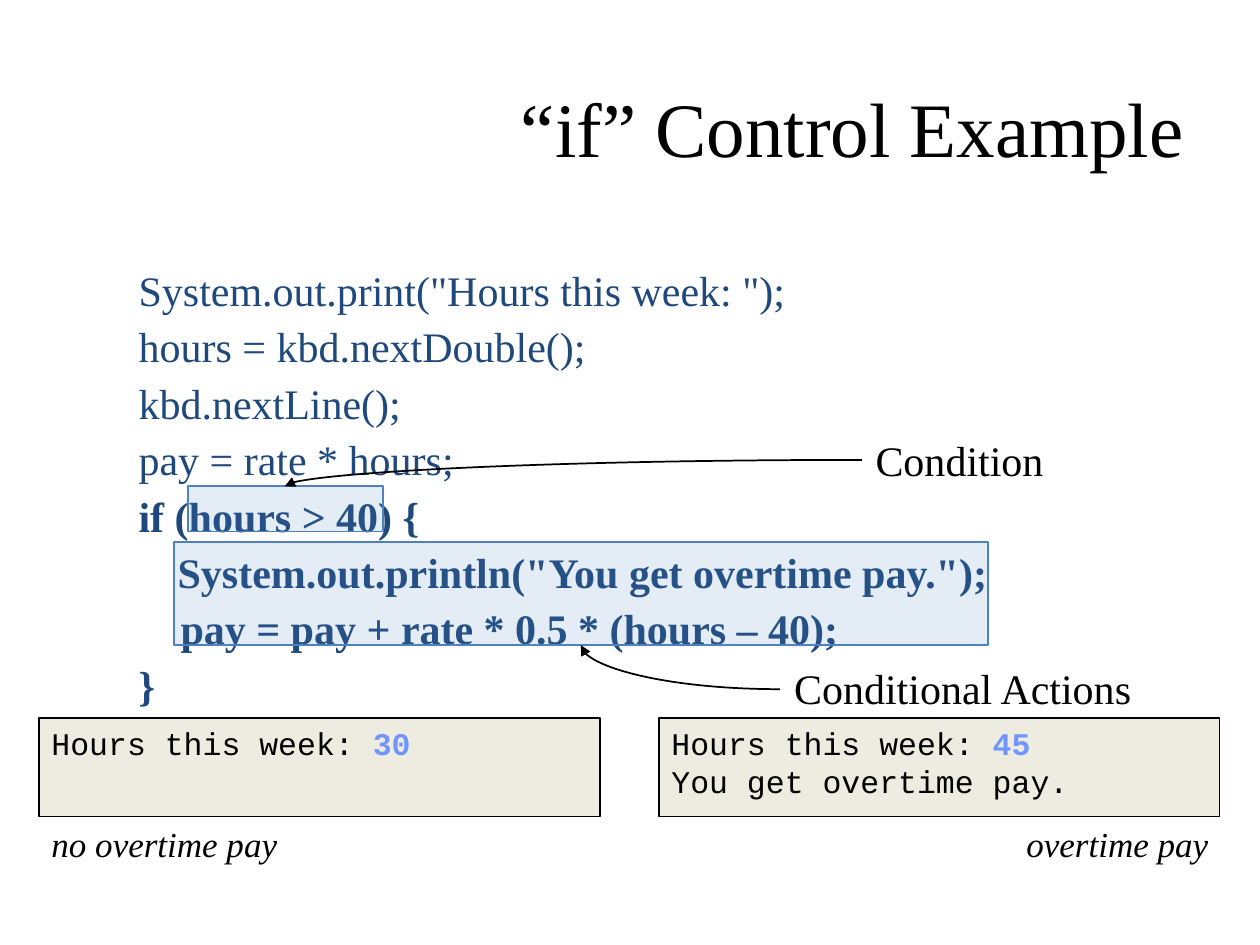
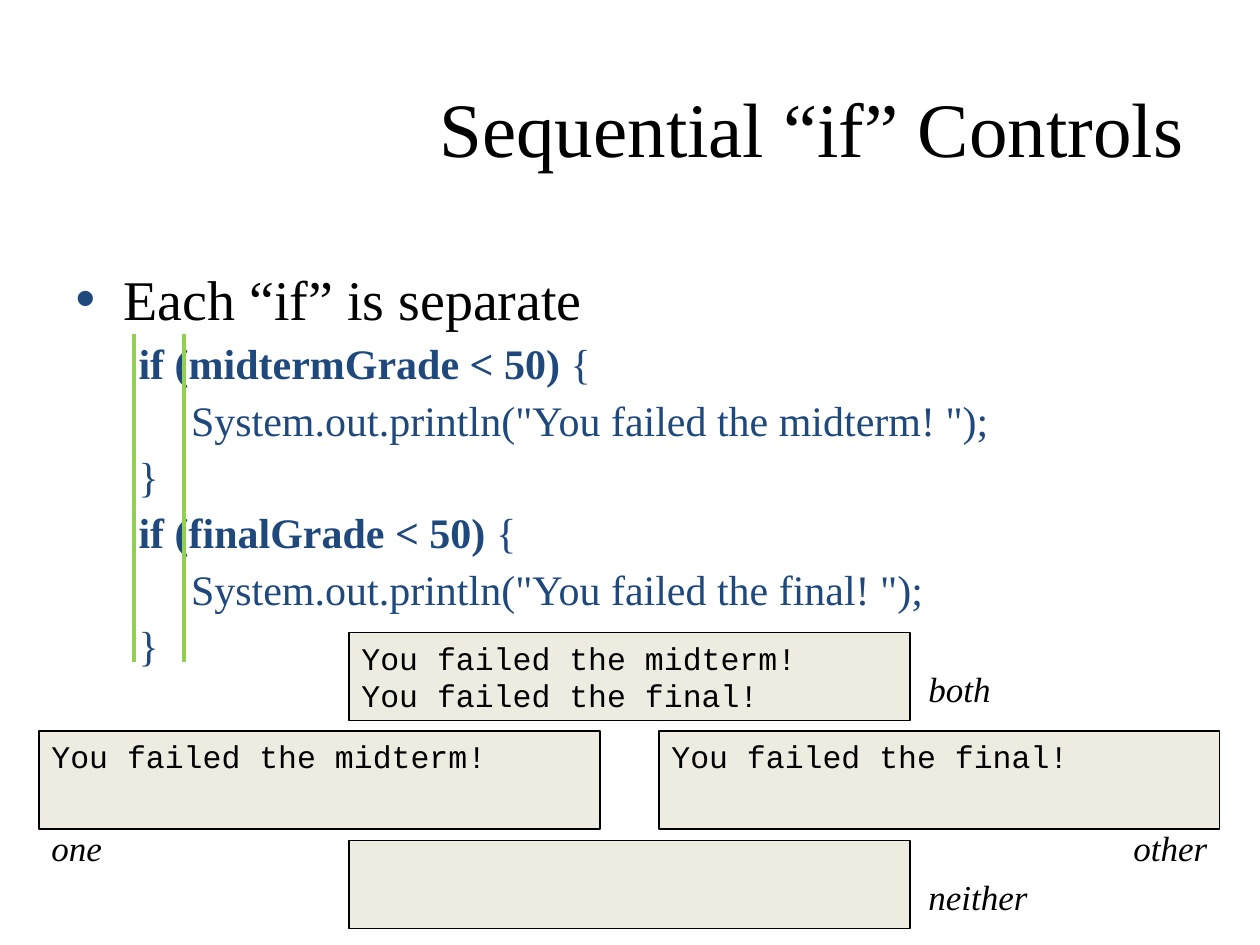
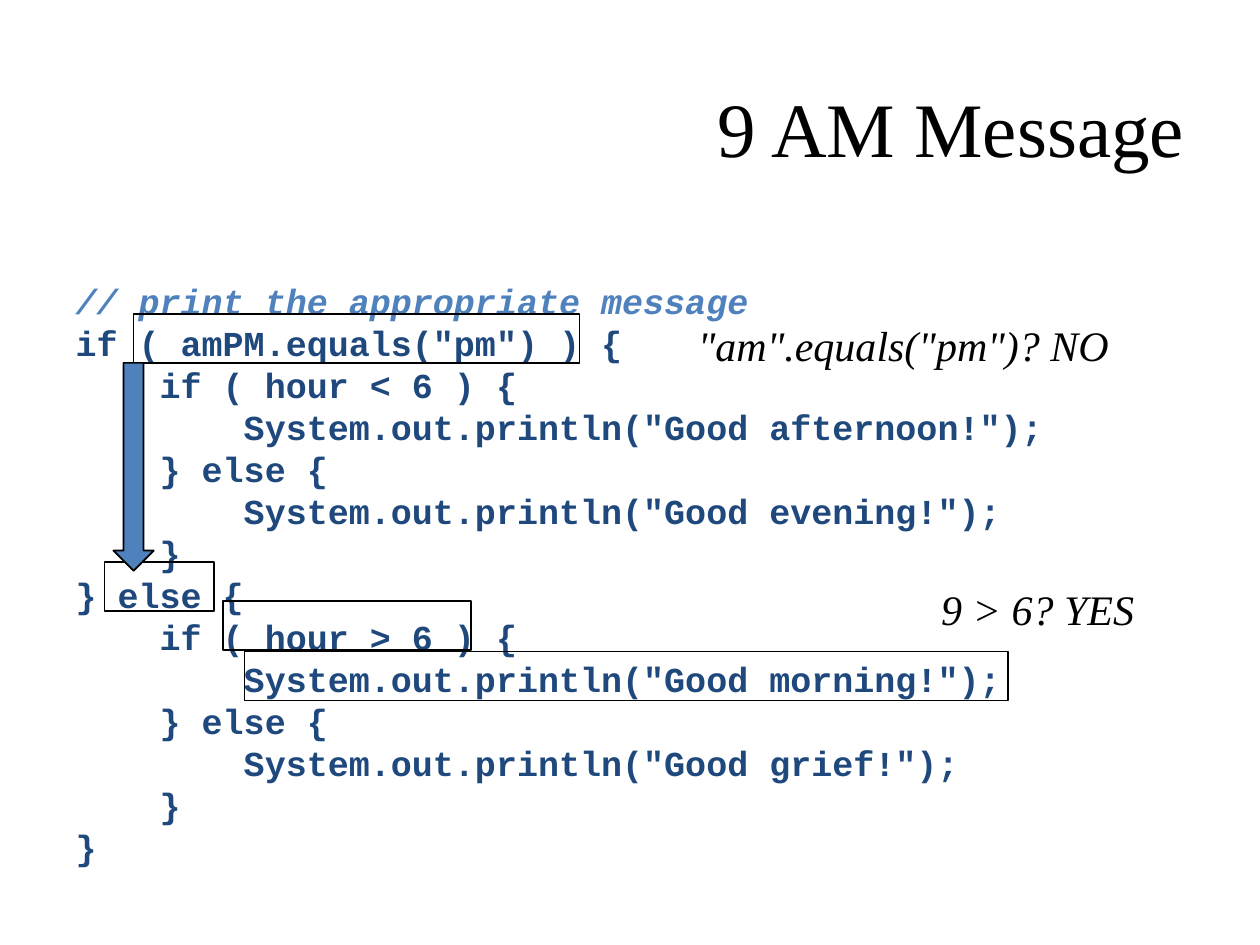
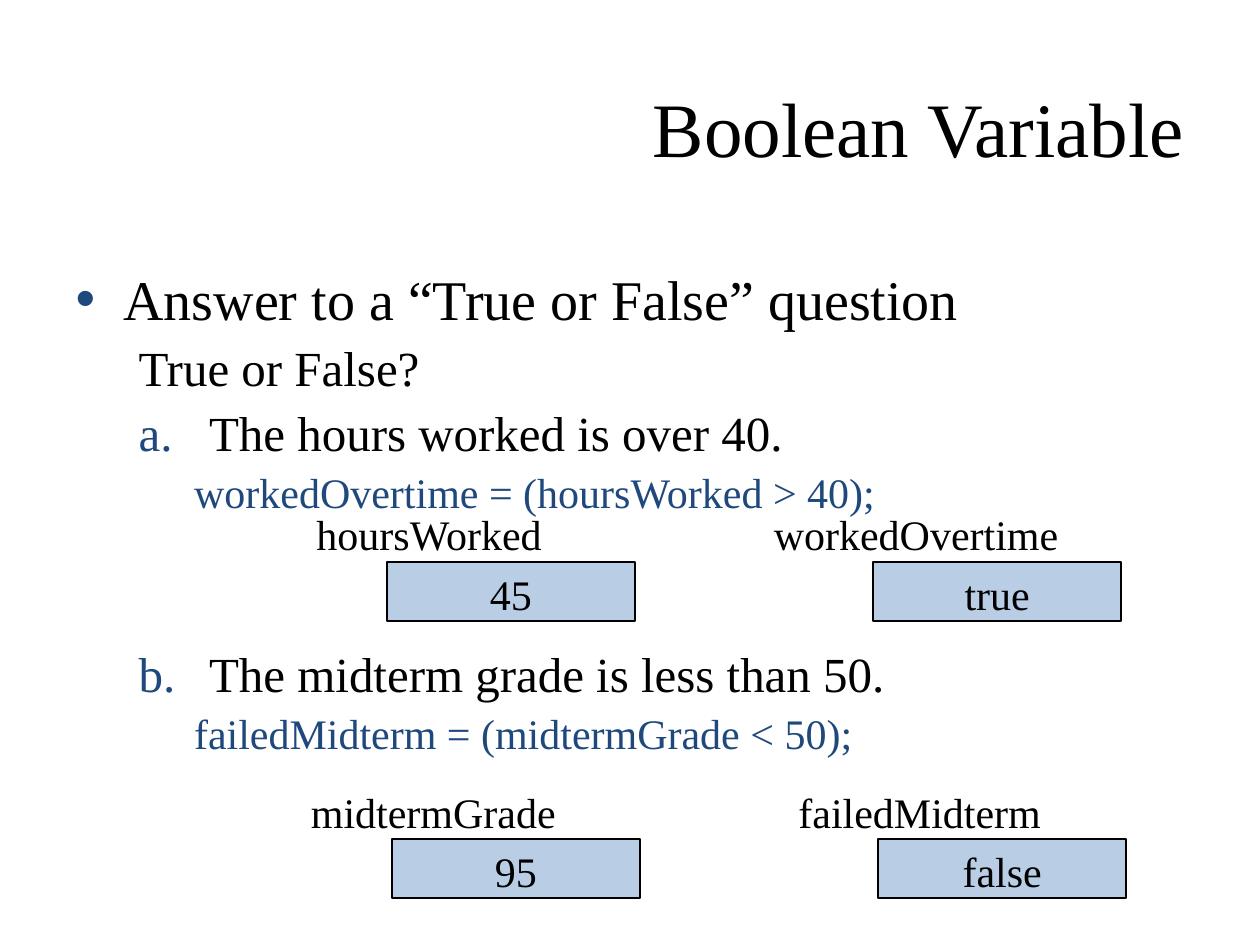
"""Build four slides on Java if controls and boolean variables."""
from lxml.etree import SubElement
from pptx import Presentation
from pptx.dml.color import RGBColor
from pptx.enum.shapes import MSO_CONNECTOR, MSO_SHAPE
from pptx.enum.text import MSO_ANCHOR, MSO_AUTO_SIZE, PP_ALIGN
from pptx.oxml.ns import qn
from pptx.util import Inches, Pt

BLACK = RGBColor(0x00, 0x00, 0x00)
NAVY = RGBColor(0x1F, 0x49, 0x7D)
BLUE = RGBColor(0x4F, 0x81, 0xBD)
PALE = RGBColor(0xB9, 0xCD, 0xE5)
SAND = RGBColor(0xEE, 0xEC, 0xE1)
INPUT = RGBColor(0x70, 0x95, 0xFD)
GREEN = RGBColor(0x92, 0xD0, 0x50)
SERIF, MONO = "Times New Roman", "Courier New"
LEFT, MID, RIGHT = PP_ALIGN.LEFT, PP_ALIGN.CENTER, PP_ALIGN.RIGHT

deck = Presentation()
deck.slide_width, deck.slide_height = Inches(10), Inches(7.5)
COL, ROW = deck.slide_width / 100, deck.slide_height / 75


def style(para, size, color=BLACK, face=SERIF, align=LEFT, bold=False, slant=False):
    """Format every run of a paragraph."""
    para.alignment = align
    for run in para.runs:
        font = run.font
        font.size, font.name, font.bold, font.italic = Pt(size), face, bold, slant
        font.color.rgb = color


def box(host, at, text="", fill=None, edge=BLACK, kind=MSO_SHAPE.RECTANGLE, **look):
    """Add a shape, or a text box if kind is None, placed in columns and rows."""
    x, y, w, h = at
    spot = [int(x * COL), int(y * ROW), int(w * COL), int(h * ROW)]
    if kind is None:
        shape = host.shapes.add_textbox(*spot)
        shape.text_frame.auto_size = MSO_AUTO_SIZE.SHAPE_TO_FIT_TEXT
    else:
        shape = host.shapes.add_shape(kind, *spot)
        shape.shadow.inherit = False
        shape.line.color.rgb, shape.line.width = edge, Pt(1)
        if fill is None:
            shape.fill.background()
        else:
            shape.fill.solid()
            shape.fill.fore_color.rgb = fill
    frame = shape.text_frame
    frame.word_wrap = kind is not None
    frame.vertical_anchor = MSO_ANCHOR.TOP
    if text:
        frame.text = text
        for para in frame.paragraphs:
            style(para, **look)
    return shape


# level, left, indent, space before, bullet, run format
LOOKS = {
    "point": (0, 0.38, -0.38, 0, "dot", dict(size=32)),
    "plain": (1, 0.81, -0.31, 3.4, None, dict(size=24, color=NAVY)),
    "bold": (1, 0.81, -0.31, 3.4, None, dict(size=24, color=NAVY, bold=True)),
    "ask": (1, 0.81, -0.31, 3.4, None, dict(size=28)),
    "first": (1, 1.06, -0.56, 3.4, 1, dict(size=28)),
    "second": (1, 1.06, -0.56, 72.5, 2, dict(size=28)),
    "answer": (2, 1.5, -0.56, 2.9, None, dict(size=24, color=NAVY)),
    "note": (0, 0.38, -0.38, 0, None, dict(size=20, color=BLUE, face=MONO, bold=True, slant=True)),
    "code": (0, 0.38, -0.38, 0, None, dict(size=20, color=NAVY, face=MONO, bold=True)),
}

PAGES = [
    ("“if” Control Example", [
        ("plain", 'System.out.print("Hours this week: ");'),
        ("plain", "hours = kbd.nextDouble();"),
        ("plain", "kbd.nextLine();"),
        ("plain", "pay = rate * hours;"),
        ("bold", "if (hours > 40) {"),
        ("bold", '\tSystem.out.println("You get overtime pay.");'),
        ("bold", "    pay = pay + rate * 0.5 * (hours – 40);"),
        ("bold", "}")]),
    ("Sequential “if” Controls", [
        ("point", "Each “if” is separate"),
        ("bold", "if (midtermGrade < 50) ", "{"),
        ("plain", '     System.out.println("You failed the midterm! ");'),
        ("plain", "}"),
        ("bold", "if (finalGrade < 50) ", "{"),
        ("plain", '     System.out.println("You failed the final! ");'),
        ("plain", "}")]),
    ("9 AM Message", [
        ("note", "// print the appropriate message"),
        ("code", 'if ( amPM.equals("pm") ) {'),
        ("code", "    if ( hour < 6 ) {"),
        ("code", '        System.out.println("Good afternoon!");'),
        ("code", "    } else {"),
        ("code", '        System.out.println("Good evening!");'),
        ("code", "    }"),
        ("code", "} else {"),
        ("code", "    if ( hour > 6 ) {"),
        ("code", '        System.out.println("Good morning!");'),
        ("code", "    } else {"),
        ("code", '        System.out.println("Good grief!");'),
        ("code", "    }"),
        ("code", "}")]),
    ("Boolean Variable", [
        ("point", "Answer to a “True or False” question"),
        ("ask", "True or False?"),
        ("first", "The hours worked is over 40."),
        ("answer", "workedOvertime = (hoursWorked > 40);"),
        ("second", "The midterm grade is less than 50."),
        ("answer", "failedMidterm = (midtermGrade < 50);")]),
]

slides = []
for name, rows in PAGES:
    slide = deck.slides.add_slide(deck.slide_layouts[1])
    slides.append(slide)
    title, body = slide.placeholders
    for holder, y, h in ((title, 3, 11.2), (body, 20, 50.8)):
        holder.left, holder.top = int(5 * COL), int(y * ROW)
        holder.width, holder.height = int(90 * COL), int(h * ROW)
        holder.text_frame.auto_size = MSO_AUTO_SIZE.NONE
    title.text_frame.text = name
    title.text_frame.vertical_anchor = MSO_ANCHOR.BOTTOM
    style(title.text_frame.paragraphs[0], 44, align=RIGHT)

    frame = body.text_frame
    frame.text = "\n".join(row[1] for row in rows)
    frame.margin_top = Inches(0.05 if rows[0][0] == "note" else 0.1)
    for para, (kind, _, *tail) in zip(frame.paragraphs, rows):
        level, left, indent, before, mark, look = LOOKS[kind]
        para.level = level
        prop = para._p.get_or_add_pPr()
        prop.set("marL", str(Inches(left)))
        prop.set("indent", str(Inches(indent)))
        if mark is None:
            SubElement(prop, qn("a:buNone"))
        else:
            tint = SubElement(prop, qn("a:buClr"))
            SubElement(tint, qn("a:srgbClr"), val=str(NAVY))
            if mark == "dot":
                SubElement(prop, qn("a:buChar"), char="•")
            else:
                SubElement(prop, qn("a:buAutoNum"), type="alphaLcPeriod", startAt=str(mark))
        para.space_before = Pt(before)
        if kind == "note":
            para.line_spacing = 1.5
        for end in tail:
            para.add_run().text = end
        style(para, **look)
        if tail:
            para.runs[-1].font.bold = False

pay, exam, morning, truth = slides
WIDE, NEAR, FAR, CORE = 44.5, 3.1, 52.3, 27.7

for x, text, value, more in ((NEAR, "Hours this week: ", "30", ""),
                             (FAR, "Hours this week: ", "45", "\nYou get overtime pay.")):
    panel = box(pay, (x, 57, WIDE, 7.8), text + more, SAND, size=18, face=MONO)
    para = panel.text_frame.paragraphs[0]
    para.add_run().text = value
    style(para, 18, face=MONO)
    para.runs[-1].font.bold = True
    para.runs[-1].font.color.rgb = INPUT

for at, text in (((NEAR, 58, WIDE, 7.8), "You failed the midterm!"),
                 ((FAR, 58, WIDE, 7.8), "You failed the final!"),
                 ((CORE, 66.7, WIDE, 7), ""),
                 ((CORE, 50.2, WIDE, 7), "You failed the midterm!\nYou failed the final!")):
    box(exam, at, text, SAND, size=18, face=MONO)

for slide, x, y, w, text, align in ((pay, NEAR, 64.8, 20.1, "no overtime pay", LEFT),
                                    (pay, 80.3, 64.8, 16.6, "overtime pay", RIGHT),
                                    (exam, NEAR, 65.1, 6.1, "one", LEFT),
                                    (exam, 88.9, 65.1, 7.9, "other", RIGHT),
                                    (exam, 72.7, 69, 9.9, "neither", LEFT),
                                    (exam, 72.7, 52.5, 7, "both", LEFT)):
    box(slide, (x, y, w, 4.4), text, kind=None, size=20, align=align, slant=True)

for slide, x, y, w, text in ((pay, 68.4, 34, 15.5, "Condition"),
                             (pay, 61.9, 52.1, 29, "Conditional Actions"),
                             (morning, 54.2, 24.9, 35, '"am".equals("pm")? NO'),
                             (morning, 73.6, 45.8, 17.5, "9 > 6? YES")):
    box(slide, (x, y, w, 5), text, kind=None, size=24, align=MID, slant=slide is morning)

for at in ((14.9, 38.6, 15.5, 3.6), (13.8, 43, 64.6, 8.2)):
    veil = box(pay, at, fill=BLUE, edge=BLUE)
    tint = veil.fill._xPr.find(qn("a:solidFill"))[0]
    SubElement(tint, qn("a:alpha"), val="15000")

for slide, start, stop, color, width in ((pay, (61.9, 54.7), (46.1, 51.2), BLACK, 1),
                                         (pay, (68.4, 36.5), (22.6, 38.6), BLACK, 1),
                                         (exam, (10.6, 26.5), (10.6, 52.5), GREEN, 2.25),
                                         (exam, (14.6, 26.5), (14.6, 52.5), GREEN, 2.25)):
    kind = MSO_CONNECTOR.CURVE if slide is pay else MSO_CONNECTOR.STRAIGHT
    ends = [int(n * unit) for spot in (start, stop) for n, unit in zip(spot, (COL, ROW))]
    link = slide.shapes.add_connector(kind, *ends)
    link.line.color.rgb, link.line.width = color, Pt(width)
    prop = link._element.spPr
    if slide is pay:
        prop.find(qn("a:prstGeom")).set("prst", "curvedConnector2")
        SubElement(prop.find(qn("a:ln")), qn("a:tailEnd"), type="triangle")
    SubElement(prop, qn("a:effectLst"))

for x, y, w in ((10.6, 24.9, 35.4), (8.3, 44.6, 8.7), (17.7, 47.7, 19.7), (19.4, 51.7, 60.6)):
    box(morning, (x, y, w, 3.9))
arrow = box(morning, (9, 28.8, 3.2, 16.5), fill=BLUE, kind=MSO_SHAPE.DOWN_ARROW)
arrow.adjustments[0], arrow.adjustments[1] = 0.5, 0.5

for x, y, value, left, w, name in ((30.7, 44.6, "45", 24, 20.1, "hoursWorked"),
                                   (31.1, 66.6, "95", 23.6, 21.6, "midtermGrade"),
                                   (69.3, 44.6, "true", 60.3, 24.8, "workedOvertime"),
                                   (69.7, 66.6, "false", 62.3, 21.4, "failedMidterm")):
    pair = truth.shapes.add_group_shape()
    box(pair, (x, y, 19.7, 4.7), value, PALE, size=24, align=MID)
    box(pair, (left, y - 4.7, w, 5), name, kind=None, size=24, align=MID)

deck.save("out.pptx")
